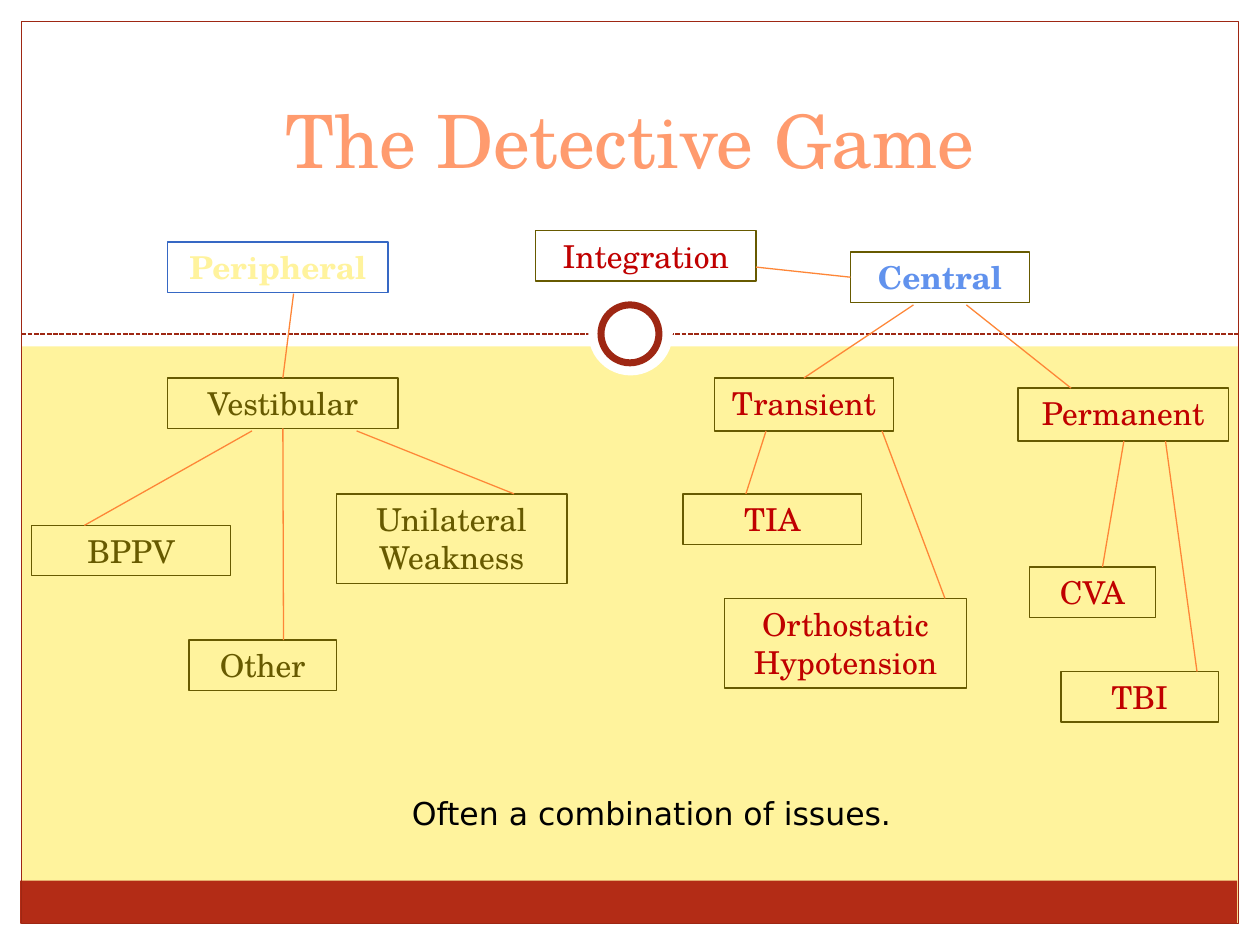
import pptx
import pptx.util
import pptx.dml.color
import pptx.enum.dml
import pptx.enum.shapes
import pptx.enum.text
import pptx.oxml
import pptx.oxml.ns

Inches, Pt = pptx.util.Inches, pptx.util.Pt
RECT = pptx.enum.shapes.MSO_SHAPE.RECTANGLE
OVAL = pptx.enum.shapes.MSO_SHAPE.OVAL
STRAIGHT = pptx.enum.shapes.MSO_CONNECTOR.STRAIGHT
ANCHOR = pptx.enum.text.MSO_ANCHOR
ALIGN = pptx.enum.text.PP_ALIGN
SERIF = "TeX Gyre Schola"
WHITE, CREAM, OLIVE, RED = "FFFFFF", "FFF39D", "675A00", "C00000"
BRICK, RUST, ORANGE = "9E2713", "B32C16", "FE8637"


def paint(fmt, color):
    """Give a fill a solid colour, or no colour at all."""
    if color is None:
        fmt.background()
    else:
        fmt.solid()
        fmt.fore_color.rgb = pptx.dml.color.RGBColor.from_string(color)


def write(sp, text, font=SERIF, size=18, color=OLIVE, bold=False,
          align=ALIGN.CENTER, anchor=ANCHOR.TOP):
    tf = sp.text_frame
    tf.word_wrap = True
    tf.vertical_anchor = anchor
    p = tf.paragraphs[0]
    p.alignment = align
    r = p.add_run()
    r.text = text
    r.font.name, r.font.size, r.font.bold = font, Pt(size), bold
    paint(r.font.fill, color)


prs = pptx.Presentation()
prs.slide_width, prs.slide_height = Inches(10), Inches(7.5)
s = prs.slides.add_slide(prs.slide_layouts[6])
paint(s.background.fill, CREAM)

# Frame: white margins, footer band, divider, border and ring
backdrop = [
    (RECT, 0, 7.33, 10, 0.17, WHITE, None, 0),
    (RECT, 9.83, 0, 0.17, 7.5, WHITE, None, 0),
    (RECT, 0, 0, 0.17, 7.5, WHITE, None, 0),
    (RECT, 0, 0, 10, 2.75, WHITE, None, 0),
    (RECT, 0.16, 6.99, 9.66, 0.34, RUST, None, 0),
    "divider",
    (RECT, 0.17, 0.17, 9.66, 7.16, None, BRICK, 0.75),
    (OVAL, 4.67, 2.31, 0.67, 0.67, WHITE, None, 0),
    (OVAL, 4.77, 2.42, 0.46, 0.46, WHITE, BRICK, 4),
]
connectors = []
for part in backdrop:
    if part == "divider":
        cx = s.shapes.add_connector(STRAIGHT, Inches(0.17), Inches(2.65),
                                    Inches(9.83), Inches(2.65))
        paint(cx.line.fill, BRICK)
        cx.line.width = Pt(0.9)
        cx.line.dash_style = pptx.enum.dml.MSO_LINE.SQUARE_DOT
        connectors.append(cx)
        continue
    kind, x, y, w, h, fill, line, weight = part
    sp = s.shapes.add_shape(kind, Inches(x), Inches(y), Inches(w), Inches(h))
    sp.shadow.inherit = False
    paint(sp.fill, fill)
    paint(sp.line.fill, line)
    if line:
        sp.line.width = Pt(weight)

# Title and closing remark
title = s.shapes.add_textbox(Inches(0.75), Inches(0.42), Inches(8.5), Inches(1.08))
write(title, "The Detective Game", size=42, color="FF9B6E", anchor=ANCHOR.BOTTOM)
remark = s.shapes.add_textbox(Inches(3.17), Inches(6.25), Inches(4.08), Inches(0.4))
write(remark, "Often a combination of issues.", font="DejaVu Sans",
      color="000000", align=ALIGN.LEFT)

# Diagnosis boxes: text, left, top, width, height, text colour
nodes = [
    ("Peripheral", 1.33, 1.92, 1.75, 0.4, CREAM),
    ("Central", 6.75, 2, 1.42, 0.4, "6192ED"),
    ("Vestibular", 1.33, 3, 1.83, 0.4, OLIVE),
    ("BPPV", 0.25, 4.17, 1.58, 0.4, OLIVE),
    ("Unilateral Weakness", 2.67, 3.92, 1.83, 0.71, OLIVE),
    ("Other", 1.5, 5.08, 1.17, 0.4, OLIVE),
    ("Integration", 4.25, 1.83, 1.75, 0.4, RED),
    ("Transient", 5.67, 3, 1.42, 0.42, RED),
    ("Permanent", 8.08, 3.08, 1.67, 0.42, RED),
    ("TIA", 5.42, 3.92, 1.42, 0.4, RED),
    ("Orthostatic Hypotension", 5.75, 4.75, 1.92, 0.71, RED),
    ("CVA", 8.17, 4.5, 1, 0.4, RED),
    ("TBI", 8.42, 5.33, 1.25, 0.4, RED),
]
boxes = {}
for text, x, y, w, h, color in nodes:
    sp = s.shapes.add_shape(RECT, Inches(x), Inches(y), Inches(w), Inches(h))
    sp.shadow.inherit = False
    paint(sp.fill, None)
    paint(sp.line.fill, "3668C4" if text == "Peripheral" else OLIVE)
    sp.line.width = Pt(0.75)
    write(sp, text, color=color, bold=text in ("Peripheral", "Central"))
    boxes[text] = sp

# Branches: start, end, then the box and side joined at each end, if any
branches = [
    (2.33, 2.33, 2.25, 3, None, ("Vestibular", 0)),
    (2, 3.42, 0.67, 4.17, None, None),
    (2.25, 3.4, 2.25, 5.08, ("Vestibular", 2), None),
    (2.83, 3.42, 4.08, 3.92, None, None),
    (6.75, 2.2, 6, 2.12, ("Central", 1), None),
    (7.25, 2.42, 6.38, 3, None, ("Transient", 0)),
    (7.67, 2.42, 8.5, 3.08, None, None),
    (6.08, 3.42, 5.92, 3.92, None, None),
    (7, 3.42, 7.5, 4.75, None, None),
    (8.92, 3.5, 8.75, 4.5, None, None),
    (9.25, 3.5, 9.5, 5.33, None, None),
]
for x1, y1, x2, y2, begin, end in branches:
    cx = s.shapes.add_connector(STRAIGHT, Inches(x1), Inches(y1),
                                Inches(x2), Inches(y2))
    paint(cx.line.fill, ORANGE)
    cx.line.width = Pt(0.75)
    if begin:
        cx.begin_connect(boxes[begin[0]], begin[1])
    if end:
        cx.end_connect(boxes[end[0]], end[1])
    connectors.append(cx)

# Lines without shadow
for cx in connectors:
    pptx.oxml.ns.qn("a:effectLst")
    cx._element.spPr.append(pptx.oxml.parse_xml(
        "<a:effectLst %s/>" % pptx.oxml.ns.nsdecls("a")))

prs.save("out.pptx")
